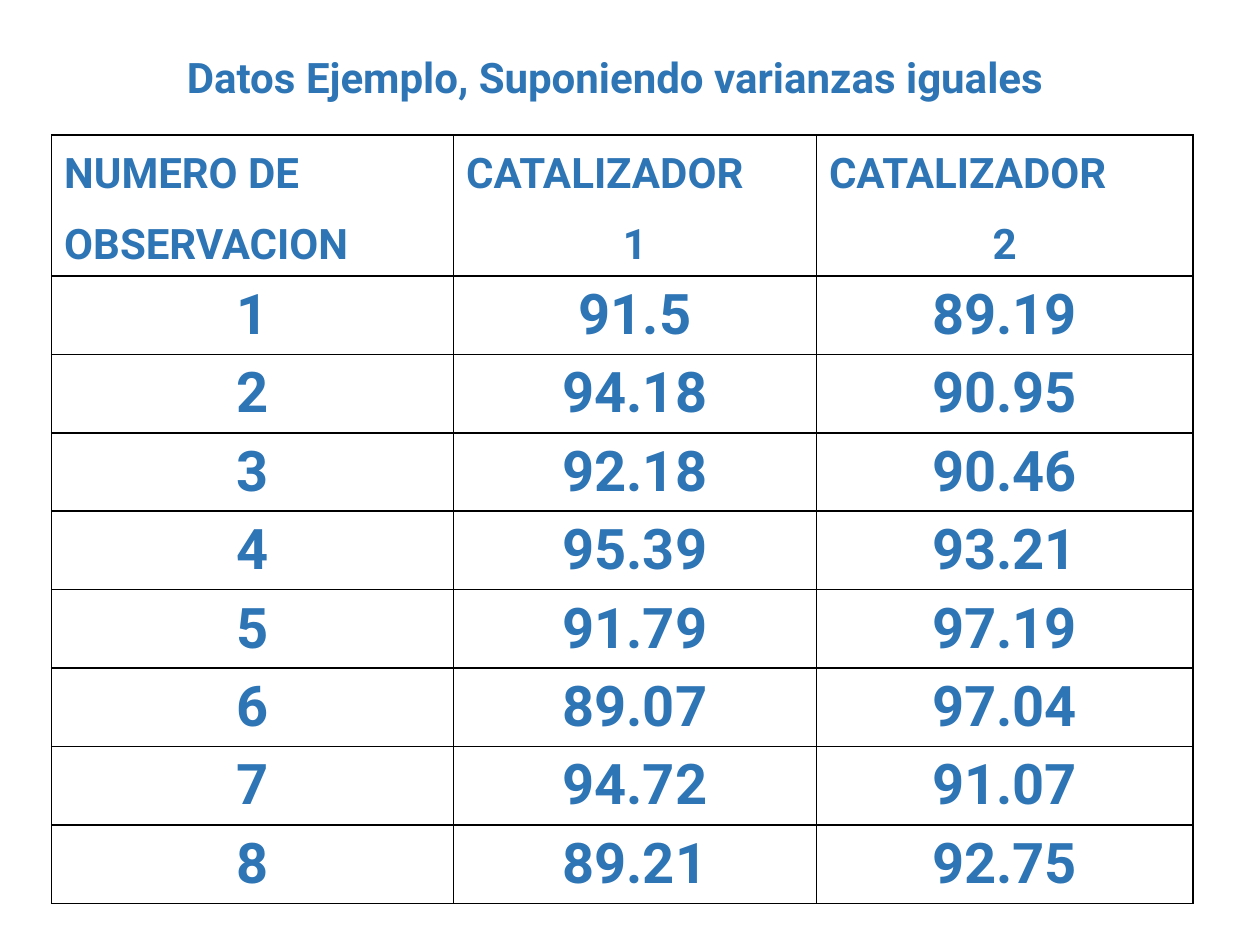
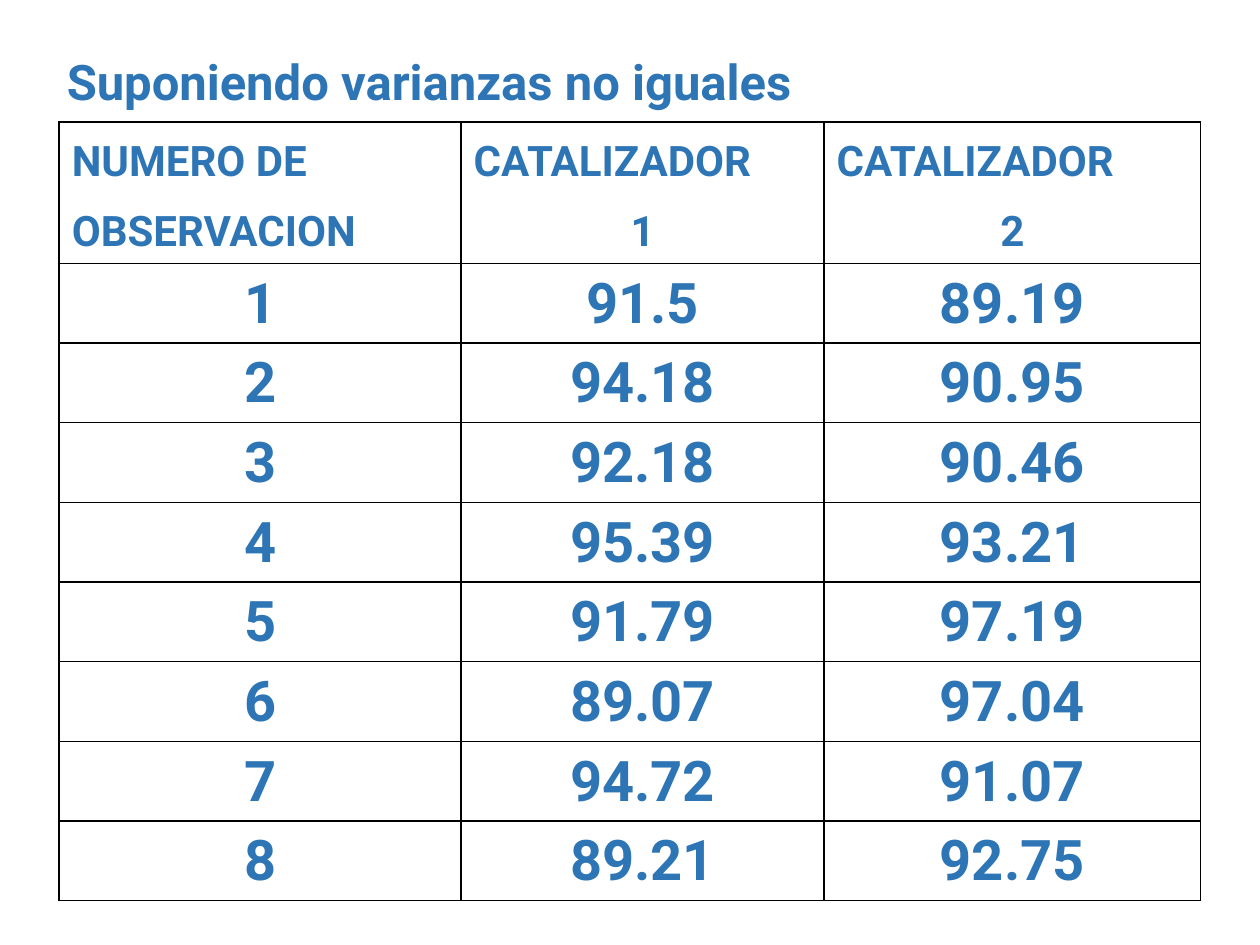
from lxml import etree
from pptx import Presentation
from pptx.dml.color import RGBColor
from pptx.enum.text import MSO_ANCHOR, MSO_AUTO_SIZE, PP_ALIGN
from pptx.oxml.ns import qn
from pptx.util import Inches, Pt

COLORS = {"text": "2E75B6", "border": "000000", "background": "FFFFFF"}
FONT = "Roboto"
COL_WIDTHS = (3.19, 2.88, 2.99)
HEADER_ROW_HEIGHT = 0.56
HEADER = [
    ("NUMERO DE", "CATALIZADOR", "CATALIZADOR"),
    ("OBSERVACION", "1", "2"),
]
CATALYST_1 = ("91.5", "94.18", "92.18", "95.39", "91.79", "89.07", "94.72", "89.21")
CATALYST_2 = ("89.19", "90.95", "90.46", "93.21", "97.19", "97.04", "91.07", "92.75")


def write_text(tf, text, size=24, align=PP_ALIGN.LEFT, color="text", bold=True):
    p = tf.paragraphs[0]
    p.alignment = align
    r = p.add_run()
    r.text = text
    r.font.name = FONT
    r.font.size = Pt(size)
    r.font.bold = bold
    r.font.color.rgb = RGBColor.from_string(COLORS[color])


def set_borders(cell, hidden=""):
    """Draw a thin line on each side of the cell, except the hidden ones."""
    tcPr = cell._tc.get_or_add_tcPr()
    for side in "LRTB":
        ln = etree.SubElement(tcPr, qn(f"a:ln{side}"), w=str(Pt(1)))
        if side in hidden:
            etree.SubElement(ln, qn("a:noFill"))
        else:
            fill = etree.SubElement(ln, qn("a:solidFill"))
            etree.SubElement(fill, qn("a:srgbClr"), val=COLORS["border"])


def add_title(s, text, height, **fmt):
    title = s.shapes.title
    title.left, title.top = Inches(0.43), Inches(0.36)
    title.width, title.height = Inches(8.9), Inches(height)
    tf = title.text_frame
    tf.word_wrap = True
    tf.auto_size = MSO_AUTO_SIZE.NONE
    tf.vertical_anchor = MSO_ANCHOR.TOP
    write_text(tf, text, **fmt)


def add_observations(s, left, top, height):
    rows = HEADER + [
        (str(n), *pair) for n, pair in enumerate(zip(CATALYST_1, CATALYST_2), 1)
    ]
    table = s.shapes.add_table(
        len(rows), len(COL_WIDTHS), Inches(left), Inches(top),
        Inches(sum(COL_WIDTHS)), Inches(height),
    ).table
    table.first_row = table.horz_banding = False
    for col, width in zip(table.columns, COL_WIDTHS):
        col.width = Inches(width)

    header_count = len(HEADER)
    body_height = (height - header_count * HEADER_ROW_HEIGHT) / len(CATALYST_1)
    for i, values in enumerate(rows):
        is_header = i < header_count
        table.rows[i].height = Inches(HEADER_ROW_HEIGHT if is_header else body_height)
        for j, value in enumerate(values):
            cell = table.cell(i, j)
            cell.vertical_anchor = MSO_ANCHOR.BOTTOM
            # The two header rows read as one, so no line parts them.
            set_borders(cell, hidden={0: "B", 1: "T"}.get(i, ""))
            cell.fill.solid()
            cell.fill.fore_color.rgb = RGBColor.from_string(COLORS["background"])
            write_text(
                cell.text_frame, value,
                size=24 if is_header else 32,
                align=PP_ALIGN.CENTER if value[0].isdigit() else PP_ALIGN.LEFT,
            )


def main():
    prs = Presentation()
    prs.slide_width, prs.slide_height = Inches(10), Inches(7.5)
    title_only = prs.slide_layouts[5]

    s = prs.slides.add_slide(title_only)
    add_title(s, "Datos Ejemplo, Suponiendo varianzas iguales", 0.5,
              align=PP_ALIGN.CENTER)
    add_observations(s, left=0.41, top=1.07, height=6.1)

    s = prs.slides.add_slide(title_only)
    add_title(s, "Suponiendo varianzas no iguales", 0.57, size=28)
    add_observations(s, left=0.47, top=0.97, height=6.18)

    prs.save("out.pptx")


if __name__ == "__main__":
    main()
